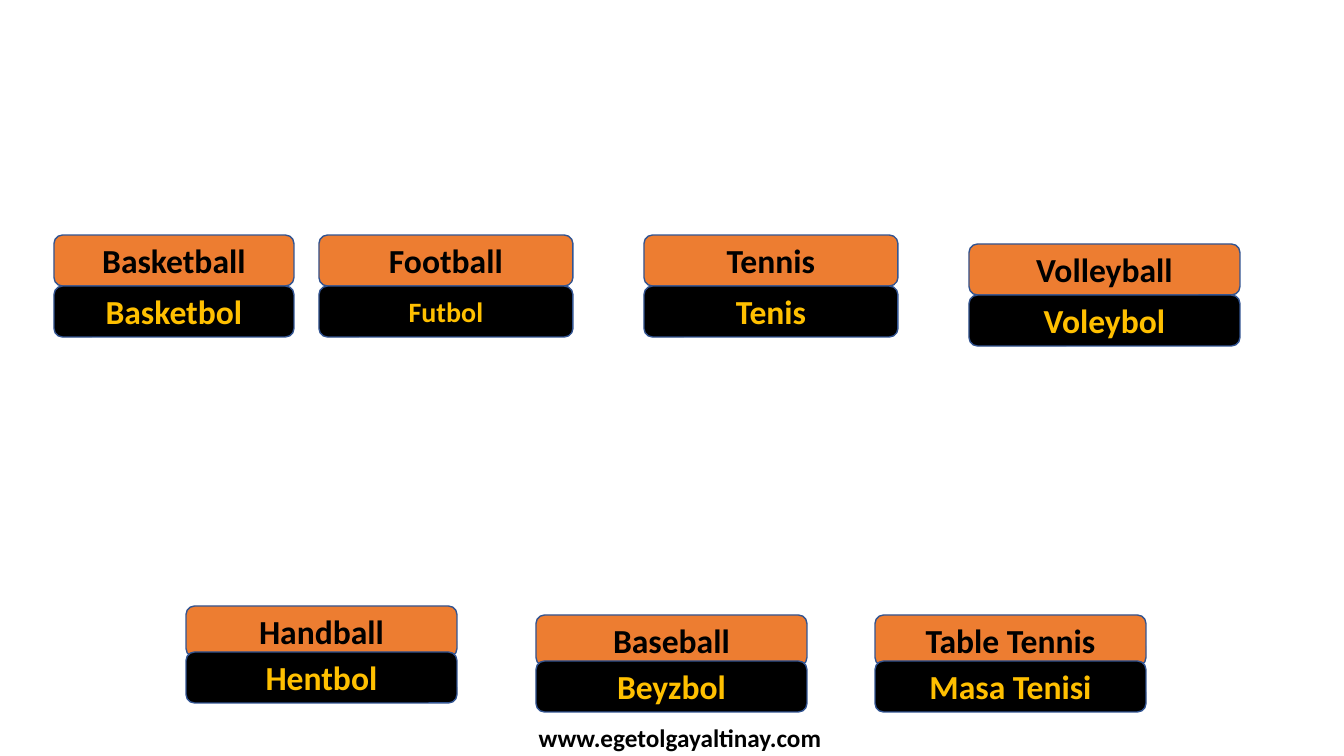
"""Builds a slide of sport names in English with their Turkish translations."""
from pptx import Presentation
from pptx.dml.color import RGBColor
from pptx.enum.shapes import MSO_SHAPE
from pptx.enum.text import MSO_ANCHOR, PP_ALIGN
from pptx.util import Emu, Pt

ROUNDED = MSO_SHAPE.ROUNDED_RECTANGLE
MIDDLE = MSO_ANCHOR.MIDDLE
CENTER = PP_ALIGN.CENTER

ORANGE = RGBColor(0xED, 0x7D, 0x31)
BLACK = RGBColor(0x00, 0x00, 0x00)
GOLD = RGBColor(0xFF, 0xC0, 0x00)
BLUE = RGBColor(0x32, 0x54, 0x91)

# English, Turkish, left, top, width, drop to the Turkish label, Turkish size
SPORTS = [
    ("Basketball", "Basketbol", 54, 235, 240, 51, 24),
    ("Football", "Futbol", 319, 235, 254, 51, 20),
    ("Tennis", "Tenis", 644, 235, 254, 51, 24),
    ("Volleyball", "Voleybol", 969, 244, 271, 51, 24),
    ("Handball", "Hentbol", 186, 606, 271, 46, 24),
    ("Baseball", "Beyzbol", 536, 615, 271, 46, 24),
    ("Table Tennis", "Masa Tenisi", 875, 615, 271, 46, 24),
]
LABEL_HEIGHT = 51
WEBSITE = "www.egetolgayaltinay.com"
WEBSITE_BOX = (463, 717, 434, 40)


def px(length):
    return Emu(round(length * 914400 / 100.8))


def write(shape, text, size, color):
    paragraph = shape.text_frame.paragraphs[0]
    paragraph.text = text
    paragraph.alignment = CENTER
    font = paragraph.font
    font.name = "Calibri"
    font.size = Pt(size)
    font.bold = True
    font.color.rgb = color


def add_label(slide, box, text, size, fill, color):
    shape = slide.shapes.add_shape(ROUNDED, *map(px, box))
    shape.shadow.inherit = False
    shape.fill.solid()
    shape.fill.fore_color.rgb = fill
    shape.line.color.rgb = BLUE
    shape.line.width = Pt(1)
    shape.text_frame.vertical_anchor = MIDDLE
    shape.text_frame.word_wrap = True
    write(shape, text, size, color)


def main():
    presentation = Presentation()
    presentation.slide_width = px(1344)
    presentation.slide_height = px(756)
    slide = presentation.slides.add_slide(presentation.slide_layouts[6])

    for english, turkish, left, top, width, drop, size in SPORTS:
        add_label(slide, (left, top, width, LABEL_HEIGHT), english, 24, ORANGE, BLACK)
        add_label(slide, (left, top + drop, width, LABEL_HEIGHT), turkish, size, BLACK, GOLD)

    website = slide.shapes.add_textbox(*map(px, WEBSITE_BOX))
    website.text_frame.word_wrap = True
    write(website, WEBSITE, 18, BLACK)

    presentation.save("out.pptx")


if __name__ == "__main__":
    main()
